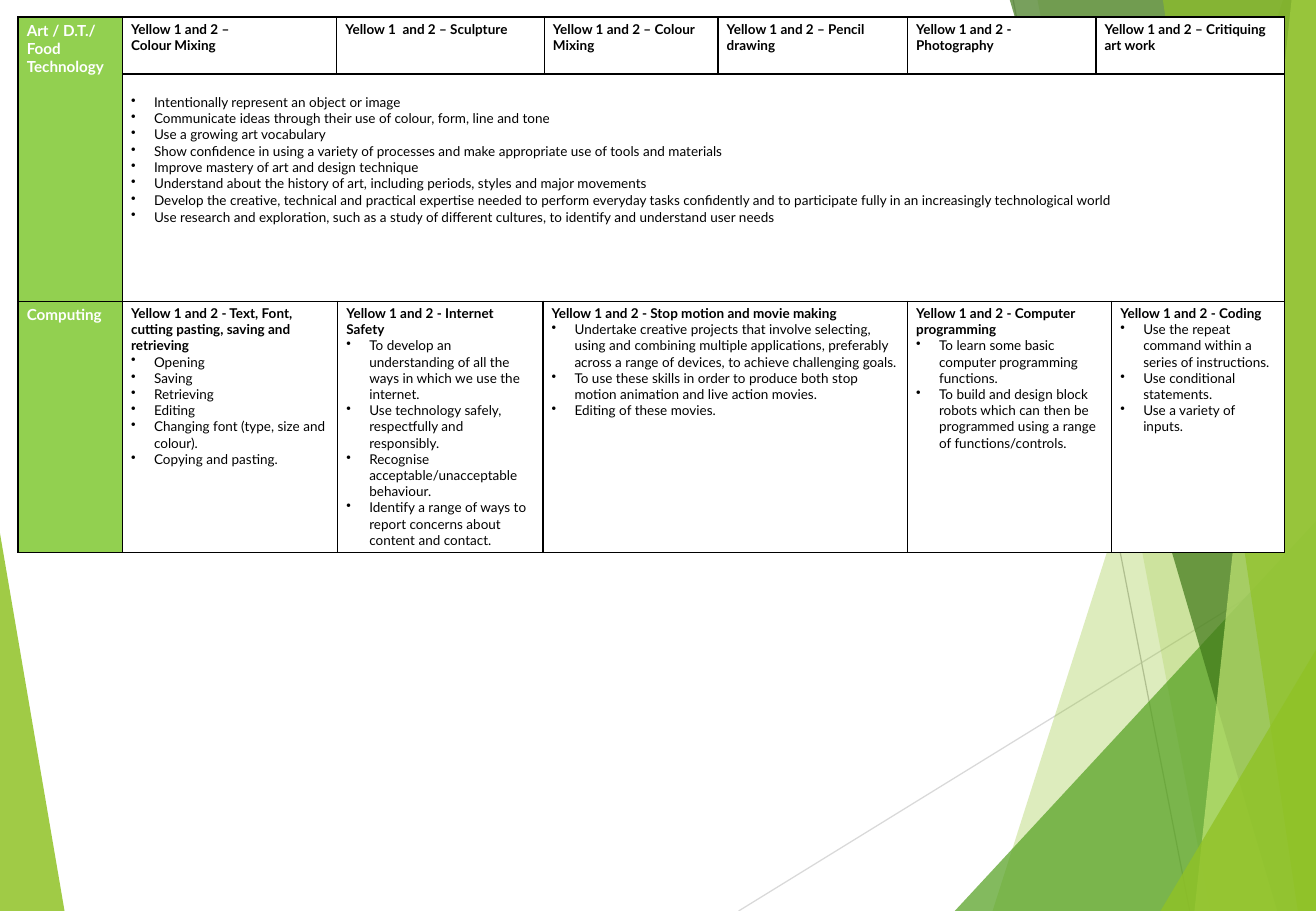
from lxml import etree
from pptx import Presentation
from pptx import util as u
from pptx.dml.color import RGBColor
from pptx.enum import shapes
from pptx.oxml import ns

Cm, Pt = u.Cm, u.Pt
WIDE, HIGH = 27.51, 19.05
FONT = "Lato"
HUE = {
    "lime": "90C226", "leaf": "54A021", "moss": "3F7819", "pale": "C0E474",
    "label": "92D050", "white": "FFFFFF", "black": "000000",
    "mist": "D9D9D9", "grey": "BFBFBF",
}

# Shards on the right: corner points, colour, opacity in percent
def band(top, base):
    return [(top, 0), (base, HIGH), (WIDE, HIGH), (WIDE, 0)]


def wedge(base, top):
    return [(base, HIGH), (WIDE, top), (WIDE, HIGH)]


SHARDS = [
    (band(26.82, 20.75), "lime", 30),
    (band(21.69, 25.3), "lime", 20),
    (wedge(19.96, 10.9), "leaf", 72),
    (band(21.11, 26.7), "moss", 70),
    (band(27, 24.97), "pale", 70),
    (band(24.31, 27.13), "lime", 65),
    (wedge(24.26, 13.59), "lime", 80),
]

ART = ["Art / D.T./", "Food", "Technology"]
TOPICS = [
    ["Yellow 1 and 2 –", "Colour Mixing"],
    ["Yellow 1  and 2 – Sculpture"],
    ["Yellow 1 and 2 – Colour Mixing"],
    ["Yellow 1 and 2 – Pencil drawing"],
    ["Yellow 1 and 2 - Photography"],
    ["Yellow 1 and 2 – Critiquing art work"],
]
SKILLS = [
    "Intentionally represent an object or image",
    "Communicate ideas through their use of colour, form, line and tone",
    "Use a growing art vocabulary",
    "Show confidence in using a variety of processes and make appropriate use of tools and materials",
    "Improve mastery of art and design technique",
    "Understand about the history of art, including periods, styles and major movements",
    "Develop the creative, technical and practical expertise needed to perform everyday tasks "
    "confidently and to participate fully in an increasingly technological world",
    "Use research and exploration, such as a study of different cultures, to identify and understand user needs",
]
UNITS = [
    ("Yellow 1 and 2 - Text, Font, cutting pasting, saving and retrieving",
     ["Opening", "Saving", "Retrieving", "Editing",
      "Changing font (type, size and colour).", "Copying and pasting."]),
    ("Yellow 1 and 2 - Internet Safety",
     ["To develop an understanding of all the ways in which we use the internet.",
      "Use technology safely, respectfully and responsibly.",
      "Recognise acceptable/unacceptable behaviour.",
      "Identify a range of ways to report concerns about content and contact."]),
    ("Yellow 1 and 2 - Stop motion and movie making",
     ["Undertake creative projects that involve selecting, using and combining multiple "
      "applications, preferably across a range of devices, to achieve challenging goals.",
      "To use these skills in order to produce both stop motion animation and live action movies.",
      "Editing of these movies."]),
    ("Yellow 1 and 2 - Computer programming",
     ["To learn some basic computer programming functions.",
      "To build and design block robots which can then be programmed using a range of functions/controls."]),
    ("Yellow 1 and 2 - Coding",
     ["Use the repeat command within a series of instructions.",
      "Use conditional statements.", "Use a variety of inputs."]),
]


def rgb(name):
    return RGBColor.from_string(HUE[name])


def shard(slide, box, points, hue, alpha):
    left, top = box[:2]
    spots = [(Cm(left + x), Cm(top + y)) for x, y in points]
    pen = slide.shapes.build_freeform(*spots[0])
    pen.add_line_segments(spots[1:], close=True)
    shape = pen.convert_to_shape()
    shape.shadow.inherit = False
    shape.fill.solid()
    shape.fill.fore_color.rgb = rgb(hue)
    shape.line.fill.background()
    tint = shape._element.spPr.find(ns.qn("a:solidFill"))[0]
    etree.SubElement(tint, ns.qn("a:alpha"), val=str(alpha * 1000))


def streak(slide, box, start, end, hue):
    left, top = box[:2]
    line = slide.shapes.add_connector(
        shapes.MSO_CONNECTOR.STRAIGHT,
        Cm(left + start[0]), Cm(top + start[1]), Cm(left + end[0]), Cm(top + end[1]))
    line.line.color.rgb = rgb(hue)
    line.line.width = Pt(0.75)
    etree.SubElement(line._element.spPr, ns.qn("a:effectLst"))


def backdrop(slide, box):
    shard(slide, box, [(0, 11.15), (1.35, HIGH), (0, HIGH)], "lime", 85)
    streak(slide, box, (15.44, HIGH), (WIDE, 11.61), "mist")
    streak(slide, box, (21.18, 0), (24.87, HIGH), "grey")
    for points, hue, alpha in SHARDS:
        shard(slide, box, points, hue, alpha)


def frame(cell):
    props = cell._tc.get_or_add_tcPr()
    for side in ("lnL", "lnR", "lnT", "lnB"):
        edge = etree.SubElement(props, ns.qn("a:" + side), w=str(Pt(1)))
        paint = etree.SubElement(edge, ns.qn("a:solidFill"))
        etree.SubElement(paint, ns.qn("a:srgbClr"), val=HUE["black"])


def bullet(para):
    props = para._p.get_or_add_pPr()
    props.set("marL", str(Cm(0.48)))
    props.set("indent", str(-Cm(0.48)))
    etree.SubElement(props, ns.qn("a:buChar"), char="•")


def write(cell, heads, points=(), size=8, hue="black", fill="white"):
    cell.fill.solid()
    cell.fill.fore_color.rgb = rgb(fill)
    cell.text = "\n".join([*heads, *points])
    for i, para in enumerate(cell.text_frame.paragraphs):
        if i >= len(heads):
            bullet(para)
        font = para.font
        font.name, font.size, font.bold = FONT, Pt(size), i < len(heads)
        font.color.rgb = rgb(hue)


def label(cell, lines):
    write(cell, lines, size=9, hue="white", fill="label")


def grid(slide, box, cols, rows):
    table = slide.shapes.add_table(len(rows), len(cols), *map(Cm, box)).table
    table.first_row = table.horz_banding = False
    for col, wide in zip(table.columns, cols):
        col.width = Cm(wide)
    for row, high in zip(table.rows, rows):
        row.height = Cm(high)
    for cell in table.iter_cells():
        cell.margin_left = cell.margin_right = Cm(0.18)
        cell.margin_top = cell.margin_bottom = Cm(0.08)
        frame(cell)
    return table


def art(slide, box):
    table = grid(slide, box, [2.18, 4.48, 4.34, 3.63, 3.96, 3.94, 3.94], [1.19, box[3] - 1.19])
    table.cell(0, 0).merge(table.cell(1, 0))
    table.cell(1, 1).merge(table.cell(1, 6))
    label(table.cell(0, 0), ART)
    for i, topic in enumerate(TOPICS, 1):
        write(table.cell(0, i), topic)
    skills = table.cell(1, 1)
    write(skills, [], SKILLS)
    skills.margin_top = Cm(0.42)
    skills.text_frame.paragraphs[6].line_spacing = 1.07


def computing(slide, box):
    table = grid(slide, box, [2.18, 4.5, 4.29, 7.62, 4.27, 3.61], [box[3]])
    label(table.cell(0, 0), ["Computing"])
    for i, (head, points) in enumerate(UNITS, 1):
        write(table.cell(0, i), [head], points)


def main():
    deck = Presentation()
    deck.slide_width, deck.slide_height = Cm(WIDE), Cm(HIGH)
    slide = deck.slides.add_slide(deck.slide_layouts[6])
    backdrop(slide, (0, 0, WIDE, HIGH))
    art(slide, (0.38, 0.36, 26.47, 5.94))
    computing(slide, (0.38, 6.3, 26.47, 5.25))
    deck.save("out.pptx")


if __name__ == "__main__":
    main()
